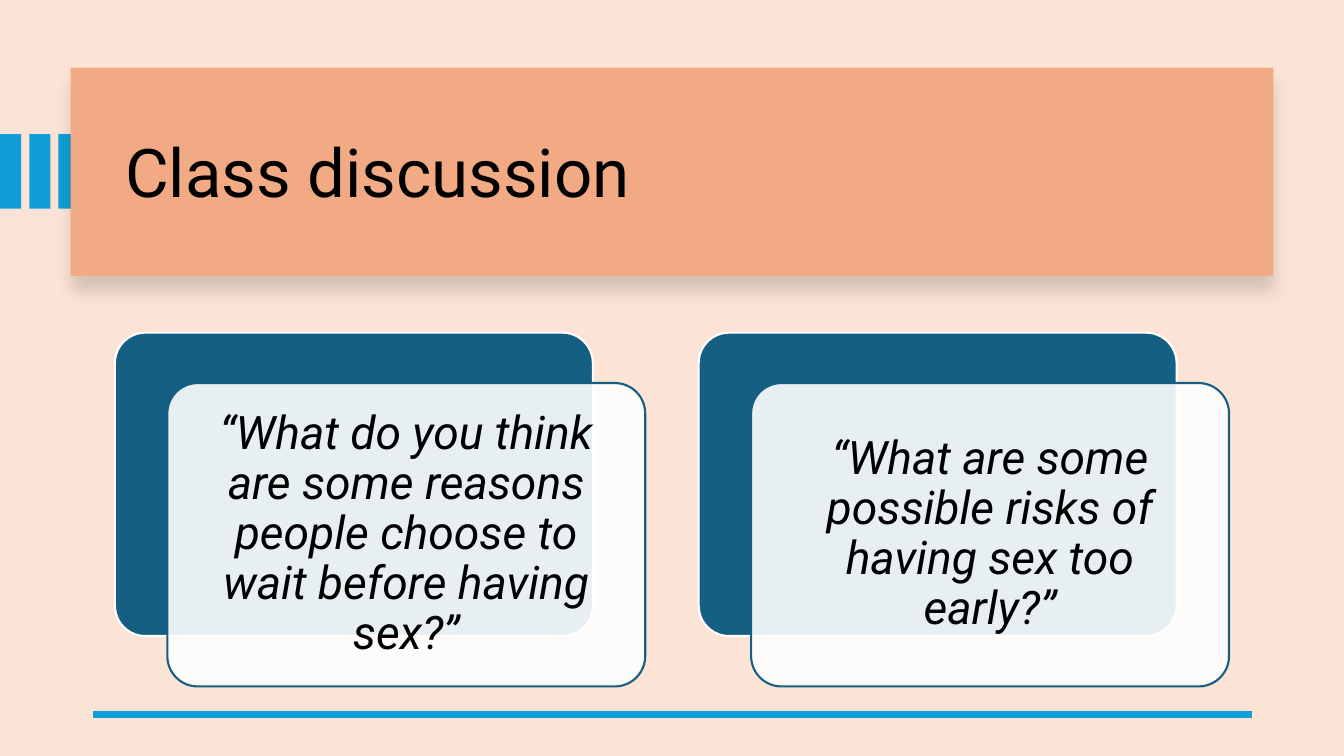
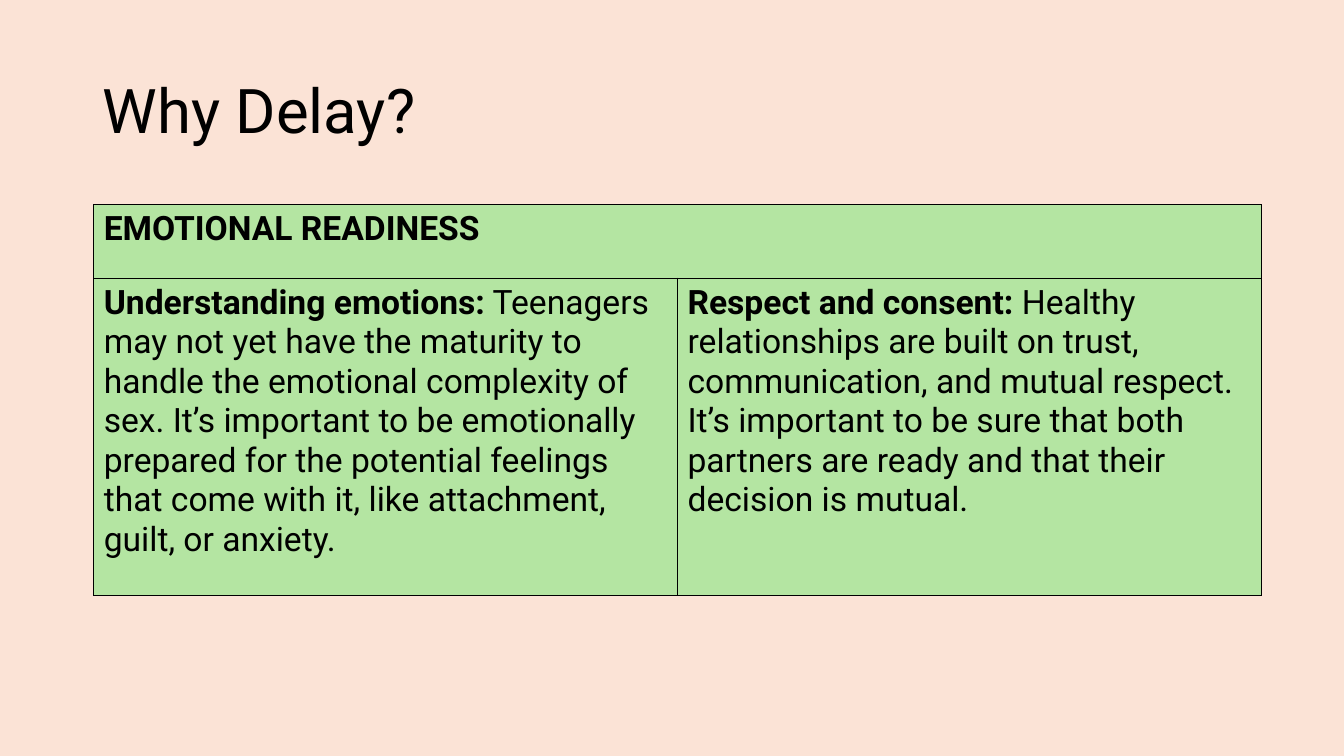
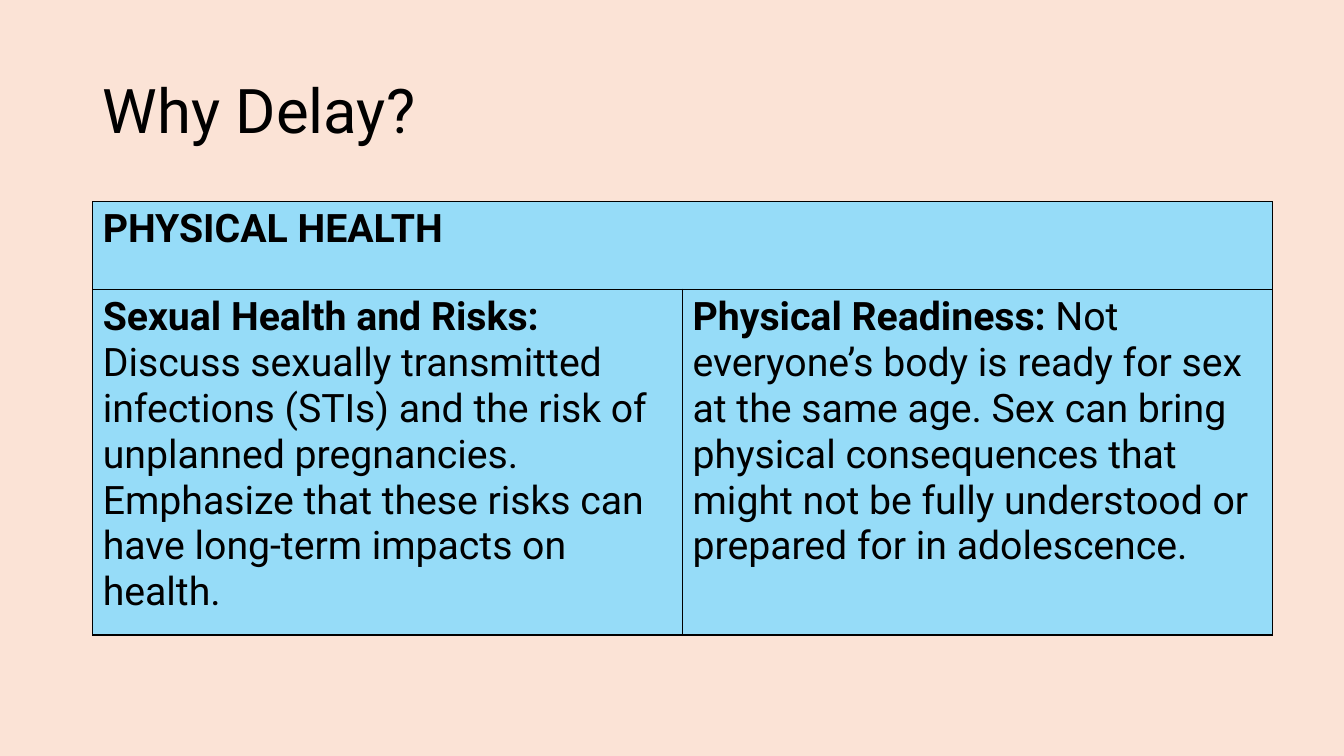
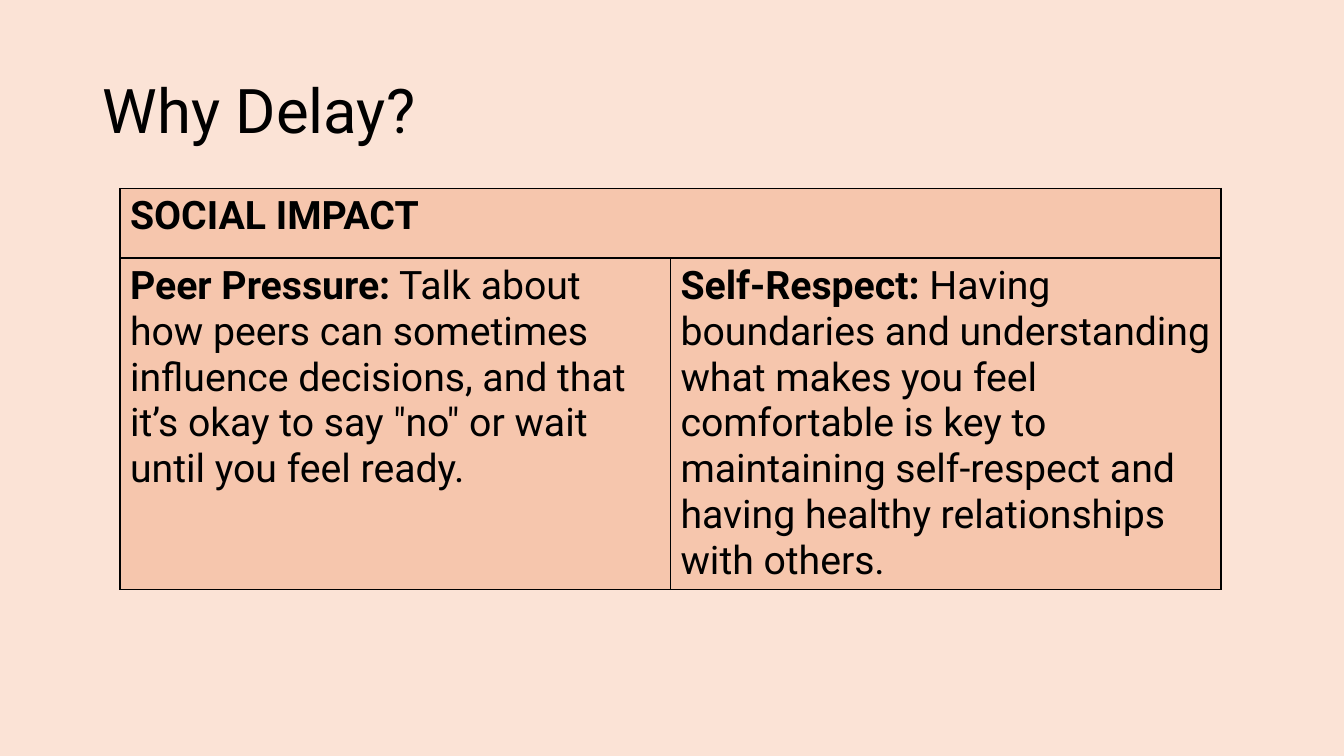
import pptx
import pptx.util
import pptx.dml.color
import pptx.enum.shapes
import pptx.enum.text
import pptx.oxml.ns
from lxml import etree

RGBColor = pptx.dml.color.RGBColor
MSO_SHAPE = pptx.enum.shapes.MSO_SHAPE
PP_ALIGN = pptx.enum.text.PP_ALIGN
MSO_ANCHOR = pptx.enum.text.MSO_ANCHOR
qn = pptx.oxml.ns.qn

PEACH = RGBColor(0xFB, 0xE3, 0xD6)
ORANGE = RGBColor(0xF2, 0xAA, 0x84)
SKY = RGBColor(0x0F, 0x9E, 0xD5)
TEAL = RGBColor(0x15, 0x60, 0x82)
GREEN = RGBColor(0xB4, 0xE5, 0xA2)
PALE_BLUE = RGBColor(0x96, 0xDC, 0xF8)
PALE_ORANGE = RGBColor(0xF6, 0xC6, 0xAD)
WHITE = RGBColor(0xFF, 0xFF, 0xFF)
BLACK = RGBColor(0, 0, 0)

FONT = "Roboto"
EMU_PER_PX = 9144
SLIDE_SIZE = (1333, 750)
TITLE_ONLY = 5

DISCUSSION_TITLE = "Class discussion"
QUESTIONS = [
    "“What do you think are some reasons people choose to wait before having sex?”",
    "“What are some possible risks of having sex too early?”",
]

REASONS_TITLE = "Why Delay?"
REASONS = [
    {
        "heading": "EMOTIONAL READINESS",
        "points": [
            ("Understanding emotions:",
             " Teenagers may not yet have the maturity to handle the emotional complexity of sex. "
             "It’s important to be emotionally prepared for the potential feelings that come with it, "
             "like attachment, guilt, or anxiety."),
            ("Respect and consent:",
             " Healthy relationships are built on trust, communication, and mutual respect. "
             "It’s important to be sure that both partners are ready and that their decision is mutual."),
        ],
        "fill": GREEN, "size": 24, "at": (93, 203), "column": 579, "rows": (73, 315),
    },
    {
        "heading": "PHYSICAL HEALTH",
        "points": [
            ("Sexual Health and Risks:",
             " Discuss sexually transmitted infections (STIs) and the risk of unplanned pregnancies. "
             "Emphasize that these risks can have long-term impacts on health."),
            ("Physical Readiness:",
             " Not everyone’s body is ready for sex at the same age. Sex can bring physical "
             "consequences that might not be fully understood or prepared for in adolescence."),
        ],
        "fill": PALE_BLUE, "size": 28, "at": (92, 200), "column": 585, "rows": (87, 343),
    },
    {
        "heading": "SOCIAL IMPACT",
        "points": [
            ("Peer Pressure:",
             " Talk about how peers can sometimes influence decisions, and that it’s okay "
             "to say \"no\" or wait until you feel ready."),
            ("Self-Respect:",
             " Having boundaries and understanding what makes you feel comfortable is key to "
             "maintaining self-respect and having healthy relationships with others."),
        ],
        "fill": PALE_ORANGE, "size": 28, "at": (119, 187), "column": 546, "rows": (69, 322),
    },
]


def px(*lengths):
    return [pptx.util.Emu(length * EMU_PER_PX) for length in lengths]


def format_span(span, size, bold=False, italic=False):
    span.font.name = FONT
    span.font.size = pptx.util.Pt(size)
    span.font.bold = bold
    span.font.italic = italic
    span.font.color.rgb = BLACK


def add_page(deck, title, size, box):
    page = deck.slides.add_slide(deck.slide_layouts[TITLE_ONLY])
    holder = page.shapes.title
    holder.left, holder.top, holder.width, holder.height = px(*box)
    frame = holder.text_frame
    frame.text = title
    frame.word_wrap = True
    frame.auto_size = pptx.enum.text.MSO_AUTO_SIZE.NONE
    frame.vertical_anchor = MSO_ANCHOR.MIDDLE
    para = frame.paragraphs[0]
    para.alignment = PP_ALIGN.LEFT
    para.line_spacing = 0.9
    format_span(para.runs[0], size)
    return page


def add_block(page, kind, box, fill, line=None):
    shape = page.shapes.add_shape(kind, *px(*box))
    shape.shadow.inherit = False
    shape.fill.solid()
    shape.fill.fore_color.rgb = fill
    if line is None:
        shape.line.fill.background()
    else:
        shape.line.color.rgb = line
        shape.line.width = pptx.util.Pt(1.5)
        shape.adjustments[0] = 0.1
    return shape


def set_alpha(color, percent):
    etree.SubElement(color, qn("a:alpha"), val=str(percent * 1000))


def drop_shadow(shape):
    effects = shape.element.spPr.find(qn("a:effectLst"))
    shadow = etree.SubElement(
        effects, qn("a:outerShdw"), blurRad=str(pptx.util.Pt(11)),
        dist=str(pptx.util.Pt(10)), dir="5400000", algn="t", rotWithShape="0")
    set_alpha(etree.SubElement(shadow, qn("a:srgbClr"), val=str(BLACK)), 15)


def add_question(page, left, question):
    top, width, height = 330, 474, 301
    shift_x, shift_y = 52, 50
    add_block(page, MSO_SHAPE.ROUNDED_RECTANGLE, (left, top, width, height), TEAL, WHITE)
    card = add_block(page, MSO_SHAPE.ROUNDED_RECTANGLE,
                     (left + shift_x, top + shift_y, width, height), WHITE, TEAL)
    set_alpha(card.element.spPr.find(qn("a:solidFill"))[0], 90)
    frame = card.text_frame
    frame.text = question
    frame.word_wrap = True
    frame.vertical_anchor = MSO_ANCHOR.MIDDLE
    (frame.margin_left, frame.margin_top,
     frame.margin_right, frame.margin_bottom) = px(14, 14, 14, 14)
    para = frame.paragraphs[0]
    para.alignment = PP_ALIGN.CENTER
    para.line_spacing = 0.9
    format_span(para.runs[0], 33, italic=True)


def build_discussion(deck):
    page = add_page(deck, DISCUSSION_TITLE, 48, (114, 89, 1113, 170))
    for index in range(3):
        add_block(page, MSO_SHAPE.RECTANGLE, (index * 29, 133, 21, 74), SKY)
    band = add_block(page, MSO_SHAPE.RECTANGLE, (70, 67, 1193, 207), ORANGE)
    drop_shadow(band)
    band.element.addnext(page.shapes.title.element)

    rule = page.shapes.add_connector(
        pptx.enum.shapes.MSO_CONNECTOR.STRAIGHT, *px(1242, 709, 92, 709))
    rule.line.color.rgb = SKY
    rule.line.width = pptx.util.Pt(4.5)
    etree.SubElement(rule.element.spPr, qn("a:effectLst"))

    for index, question in enumerate(QUESTIONS):
        add_question(page, 114 + index * 579, question)


def add_borders(cell):
    properties = cell._tc.get_or_add_tcPr()
    for index, side in enumerate(("a:lnL", "a:lnR", "a:lnT", "a:lnB")):
        border = etree.Element(qn(side), w=str(pptx.util.Pt(1)))
        fill = etree.SubElement(border, qn("a:solidFill"))
        etree.SubElement(fill, qn("a:srgbClr"), val=str(BLACK))
        properties.insert(index, border)


def fill_cell(cell, bold_text, plain_text, size):
    para = cell.text_frame.paragraphs[0]
    for text, bold in ((bold_text, True), (plain_text, False)):
        if text:
            span = para.add_run()
            span.text = text
            format_span(span, size, bold)


def build_reason(deck, reason):
    page = add_page(deck, REASONS_TITLE, 44, (92, 40, 1150, 145))
    points, heights = reason["points"], reason["rows"]
    width = reason["column"] * len(points)
    table = page.shapes.add_table(
        len(heights), len(points), *px(*reason["at"], width, sum(heights))).table
    table.first_row = False
    table.horz_banding = False
    for row, height in zip(table.rows, px(*heights)):
        row.height = height
    for cell in table.iter_cells():
        cell.fill.solid()
        cell.fill.fore_color.rgb = reason["fill"]
        add_borders(cell)
    table.cell(0, 0).merge(table.cell(0, len(points) - 1))
    fill_cell(table.cell(0, 0), reason["heading"], "", reason["size"])
    for column, (label, detail) in enumerate(points):
        fill_cell(table.cell(1, column), label, detail, reason["size"])


def main():
    deck = pptx.Presentation()
    deck.slide_width, deck.slide_height = px(*SLIDE_SIZE)
    backdrop = deck.slide_master.background.fill
    backdrop.solid()
    backdrop.fore_color.rgb = PEACH
    build_discussion(deck)
    for reason in REASONS:
        build_reason(deck, reason)
    deck.save("out.pptx")


if __name__ == "__main__":
    main()
